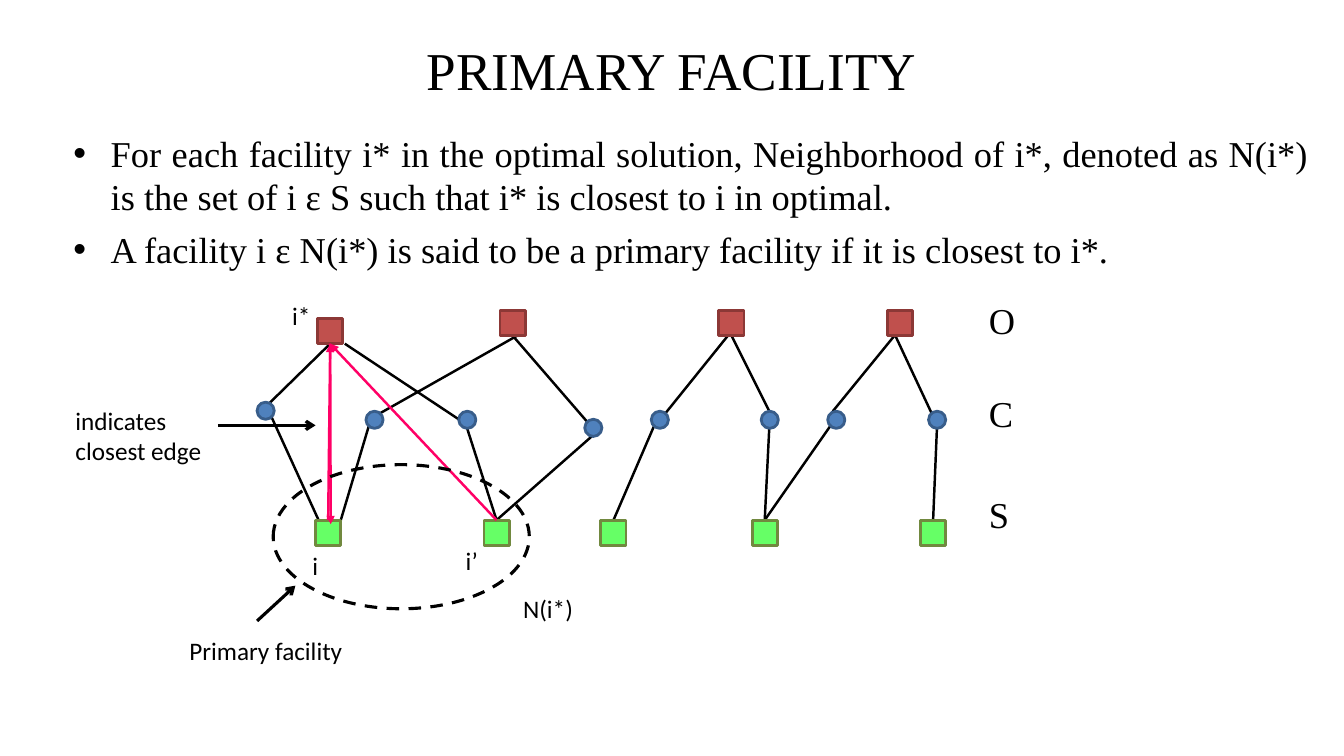
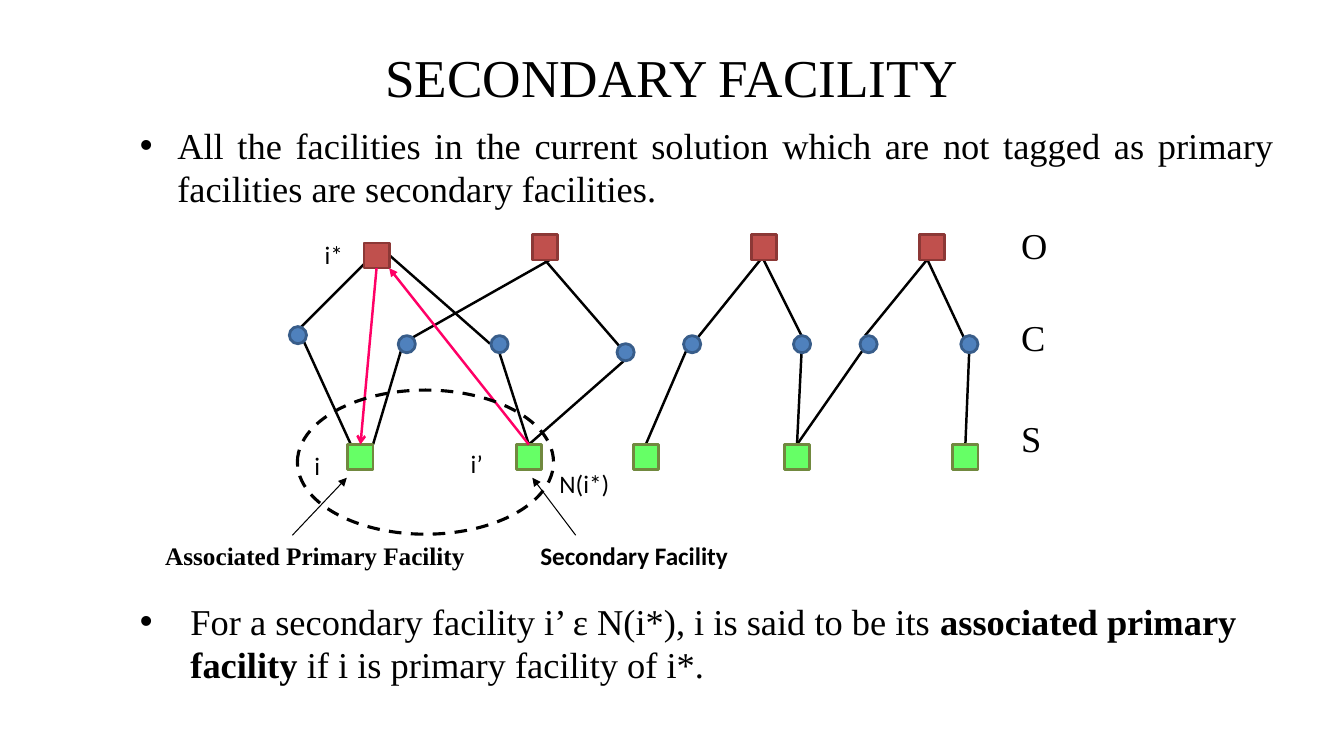
import lxml.etree
import pptx
import pptx.dml.color
import pptx.enum.dml
import pptx.enum.shapes
import pptx.enum.text
import pptx.oxml.ns
import pptx.util

Inches = pptx.util.Inches
Pt = pptx.util.Pt
qn = pptx.oxml.ns.qn
Shape = pptx.enum.shapes.MSO_SHAPE
Align = pptx.enum.text.PP_ALIGN
Anchor = pptx.enum.text.MSO_ANCHOR

# Shared style
SERIF, SANS = "Times New Roman", "Calibri"
BLACK, PINK = "000000", "FF0066"
OPTIMAL = ("C0504D", "8C3836")
CLIENT = ("4F81BD", "385D8A")
SOLUTION = ("66FF66", "71893F")
SQUARE, CIRCLE = 0.25, 0.17
SNAP = Inches(0.03)

# Network layout; each slide shifts it as a whole
OPTIMAL_TOP, STAR_TOP, SOLUTION_TOP = 3.08, 3.16, 5.16
OPTIMAL_LEFTS = [4.96, 7.13, 8.8]
SOLUTION_LEFTS = [3.13, 4.8, 5.96, 7.46, 9.13]
CLIENTS = [(2.55, 3.99), (3.63, 4.08), (4.55, 4.08), (5.8, 4.16),
           (6.46, 4.08), (7.55, 4.08), (8.21, 4.08), (9.21, 4.08)]
ROW_LABELS = {"O": 2.91, "C": 3.83, "S": 4.83}
EDGES = [
    # Optimal facilities to clients
    ((5.13, 3.33), (3.77, 4.1)), ((5.09, 3.33), (5.82, 4.18)),
    ((7.22, 3.33), (6.6, 4.1)), ((7.25, 3.33), (7.63, 4.08)),
    ((8.88, 3.32), (8.26, 4.08)), ((8.88, 3.33), (9.24, 4.1)),
    # Facilities of the current solution to clients
    ((3.16, 5.16), (2.69, 4.13)), ((3.38, 5.16), (3.66, 4.22)),
    ((4.92, 5.16), (4.63, 4.24)), ((4.92, 5.16), (5.88, 4.32)),
    ((6.09, 5.16), (6.49, 4.22)), ((7.59, 5.16), (7.63, 4.24)),
    ((7.59, 5.16), (8.24, 4.22)), ((9.26, 5.16), (9.3, 4.07)),
]


def color(value):
    return pptx.dml.color.RGBColor.from_string(value)


def add_text(page, text, left, top, width, height, *, size=18, font=SANS,
             bold=False, align=None, anchor=Anchor.TOP, before=0, indent=0):
    """Each line is a paragraph; parts between bars are bold; indent adds bullets."""
    box = page.shapes.add_textbox(*map(Inches, (left, top, width, height)))
    frame = box.text_frame
    frame.word_wrap = True
    frame.vertical_anchor = anchor
    for number, line in enumerate(text.split("\n")):
        para = frame.add_paragraph() if number else frame.paragraphs[0]
        para.alignment = align
        para.space_before = Pt(before)
        if indent:
            props = para._p.get_or_add_pPr()
            props.set("marL", str(Inches(indent)))
            props.set("indent", str(-Inches(indent)))
            lxml.etree.SubElement(props, qn("a:buFont")).set("typeface", "Arial")
            lxml.etree.SubElement(props, qn("a:buChar")).set("char", "•")
        for part, words in enumerate(line.split("|")):
            span = para.add_run()
            span.text = words
            span.font.name = font
            span.font.size = Pt(size)
            span.font.bold = bold or part % 2 == 1
            span.font.color.rgb = color(BLACK)


def add_title(page, text, top):
    add_text(page, text, 2.16, top, 9, 1.12, size=38, font=SERIF,
             align=Align.CENTER, anchor=Anchor.MIDDLE)


def add_bullets(page, text, left, top, width, height, **style):
    add_text(page, text, left, top, width, height, size=26, font=SERIF,
             **{"indent": 0.37, "before": 6.5, "align": Align.JUSTIFY, **style})


def add_node(page, kind, left, top, size, colors):
    node = page.shapes.add_shape(kind, *map(Inches, (left, top, size, size)))
    node.shadow.inherit = False
    node.fill.solid()
    node.fill.fore_color.rgb = color(colors[0])
    node.line.color.rgb = color(colors[1])
    node.line.width = Pt(2)
    return node


def add_line(page, start, end, *, stroke=BLACK, width=1.75, tip=None):
    line = page.shapes.add_connector(pptx.enum.shapes.MSO_CONNECTOR.STRAIGHT,
                                     *map(Inches, (*start, *end)))
    line.line.color.rgb = color(stroke)
    line.line.width = Pt(width)
    props = line._element.spPr
    if tip:
        lxml.etree.SubElement(props.find(qn("a:ln")), qn("a:tailEnd")).set("type", tip)
    lxml.etree.SubElement(props, qn("a:effectLst"))
    return line


def join(line, squares):
    """Connect the ends that lie at the middle of a square's top or bottom."""
    ends = [(line.begin_x, line.begin_y, line.begin_connect),
            (line.end_x, line.end_y, line.end_connect)]
    for x, y, connect in ends:
        for square in squares:
            middle = square.left + square.width // 2
            for site, level in ((0, square.top), (2, square.top + square.height)):
                if abs(x - middle) < SNAP and abs(y - level) < SNAP:
                    connect(square, site)


def add_neighborhood(page, left, top):
    ring = page.shapes.add_shape(Shape.OVAL, *map(Inches, (left, top, 2.54, 1.43)))
    ring.shadow.inherit = False
    ring.fill.background()
    ring.line.color.rgb = color(BLACK)
    ring.line.width = Pt(2.25)
    ring.line.dash_style = pptx.enum.dml.MSO_LINE.DASH


def add_network(page, star_left, star_edges, right=0, down=0):
    """Draw the three rows with their edges and return the squares."""
    def moved(point):
        return point[0] + right, point[1] + down

    lines = [add_line(page, moved(start), moved(end))
             for start, end in EDGES + star_edges]
    for point in CLIENTS:
        add_node(page, Shape.FLOWCHART_CONNECTOR, *moved(point), CIRCLE, CLIENT)
    spots = [((star_left, STAR_TOP), OPTIMAL)]
    spots += [((left, OPTIMAL_TOP), OPTIMAL) for left in OPTIMAL_LEFTS]
    spots += [((left, SOLUTION_TOP), SOLUTION) for left in SOLUTION_LEFTS]
    squares = [add_node(page, Shape.RECTANGLE, *moved(point), SQUARE, colors)
               for point, colors in spots]
    for line in lines:
        join(line, squares)
    for label, top in ROW_LABELS.items():
        add_text(page, label, *moved((9.71, top)), 0.58, 0.54, size=26, font=SERIF)
    return squares


def add_closest_edge(page, squares, start, end, tip="triangle"):
    join(add_line(page, start, end, stroke=PINK, tip=tip), squares)


def add_labels(page, labels):
    for text, left, top, width in labels:
        add_text(page, text, left, top, width, 0.4)


def primary_slide(page):
    add_title(page, "PRIMARY FACILITY", 0.13)
    add_bullets(page, "For each facility i* in the optimal solution, Neighborhood of i*, "
                "denoted as N(i*) is the set of i ɛ S such that i* is closest to i in optimal.\n"
                "A facility i ɛ N(i*) is said to be a primary facility if it is closest to i*.",
                0.63, 1.25, 12.46, 1.66)
    squares = add_network(page, 3.15, [((3.28, 3.41), (2.59, 4.08)),
                                       ((3.42, 3.41), (4.55, 4.16))])
    add_closest_edge(page, squares, (3.28, 3.41), (3.28, 5.2))
    add_closest_edge(page, squares, (3.26, 5.16), (3.28, 3.41))
    add_closest_edge(page, squares, (4.92, 5.16), (3.28, 3.41))
    add_neighborhood(page, 2.71, 4.61)
    add_labels(page, [("i", 3, 5.41, 0.38), ("i*", 2.8, 2.93, 0.45),
                      ("i’", 4.52, 5.36, 0.38), ("N(i*)", 5.09, 5.84, 0.73),
                      ("indicates closest edge", 0.65, 3.97, 1.51),
                      ("Primary facility", 1.78, 6.25, 1.93)])
    # Pointers from the captions
    add_line(page, (2.16, 4.22), (3.13, 4.22), width=2.25, tip="arrow")
    add_line(page, (2.55, 6.16), (2.93, 5.81), width=2.25, tip="arrow")


def secondary_slide(page):
    add_title(page, "SECONDARY FACILITY", 0.2)
    add_bullets(page, "All the facilities in the current solution which are not tagged "
                "as primary facilities are secondary facilities.", 1.29, 1.17, 11.46, 0.99)
    squares = add_network(page, 3.29, [((3.33, 3.33), (2.58, 4.08)),
                                       ((3.54, 3.28), (4.54, 4.16))],
                          right=0.32, down=-0.75)
    # Pointers from the captions
    add_line(page, (2.9, 5.31), (3.44, 4.74), width=0.75, tip="triangle")
    add_line(page, (5.71, 5.31), (5.28, 4.74), width=0.75, tip="triangle")
    add_closest_edge(page, squares, (5.23, 4.41), (3.86, 2.66))
    add_closest_edge(page, squares, (3.73, 2.66), (3.57, 4.41), tip="arrow")
    add_text(page, "Secondary Facility", 5.26, 5.31, 2.29, 0.4, bold=True)
    add_text(page, "Associated Primary Facility", 1.54, 5.31, 3.28, 0.4,
             font=SERIF, bold=True, align=Align.JUSTIFY, before=6.5)
    add_neighborhood(page, 2.95, 3.87)
    add_labels(page, [("N(i*)", 5.45, 4.6, 0.73), ("i*", 3.12, 2.33, 0.45),
                      ("i’", 4.57, 4.4, 0.45), ("i", 3.02, 4.42, 0.45)])
    add_bullets(page, "For a secondary facility i’ ɛ N(i*), i is said to be its "
                "|associated primary facility |if i is primary facility of i*.",
                1.29, 5.89, 11.3, 0.98, indent=0.5, before=0, align=Align.LEFT)


def main():
    deck = pptx.Presentation()
    deck.slide_width, deck.slide_height = Inches(13.33), Inches(7.5)
    for build in (primary_slide, secondary_slide):
        build(deck.slides.add_slide(deck.slide_layouts[6]))
    deck.save("out.pptx")


if __name__ == "__main__":
    main()
